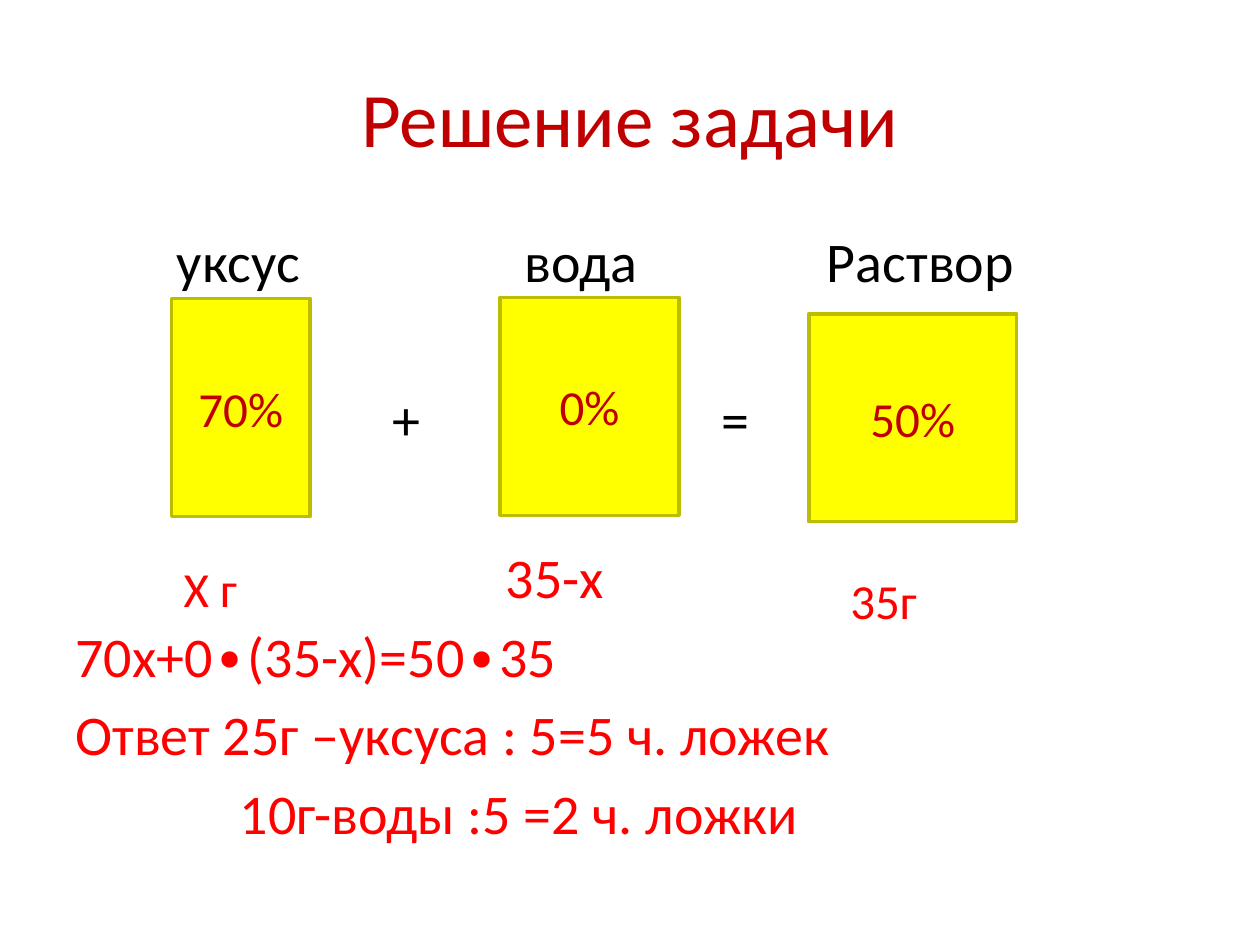
from lxml.etree import SubElement
from pptx import Presentation
from pptx.dml.color import RGBColor
from pptx.enum.shapes import MSO_SHAPE
from pptx.enum.text import MSO_ANCHOR, PP_ALIGN
from pptx.oxml.ns import qn
from pptx.util import Pt

BLACK, RED, DARK = "000000", "FF0000", "C00000"
SIZE, GAP = 32, 6.4
SKIP = 51.9  # one empty line plus the usual gap

# space before, colour, tab stops, text
LINES = [
    (0, BLACK, [58, 256.5, 429.5], "\tуксус\tвода\tРаствор"),
    (SKIP, BLACK, [181, 369.5], "\t+\t="),
    (SKIP, RED, [246], "\t35-х"),
    (GAP, RED, [], "70х+0∙(35-х)=50∙35"),
    (GAP, RED, [], "Ответ 25г –уксуса : 5=5 ч. ложек"),
    (GAP, RED, [94], "\t10г-воды :5 =2 ч. ложки"),
]
# left, top, width, height, text
TANKS = [
    (98, 170.6, 79.2, 124.6, "70%"),
    (285.8, 169.9, 102.2, 124.6, "0%"),
    (462.2, 179.3, 118.8, 118.8, "50%"),
]
MASSES = [
    (478.8, 322.6, 73.4, 41, "35г"),
    (97.9, 315.4, 69.8, 41, "Х г"),
]


def color(code):
    return RGBColor.from_string(code)


def style(item, form):
    for name, value in form.items():
        setattr(item, name, value)


def write(para, text, size, code):
    run = para.add_run()
    run.text = text
    style(run.font, {"name": "Calibri", "size": Pt(size)})
    run.font.color.rgb = color(code)


def add_stops(para, stops):
    if stops:
        tabs = SubElement(para._p.get_or_add_pPr(), qn("a:tabLst"))
        for stop in stops:
            SubElement(tabs, qn("a:tab"), pos=str(Pt(stop)), algn="l")


def add_box(slide, place):
    """Add an empty wrapping text box and return its frame."""
    frame = slide.shapes.add_textbox(*map(Pt, place)).text_frame
    frame.word_wrap = True
    return frame


def add_title(slide, text):
    frame = add_box(slide, (36, 21.6, 648, 90))
    frame.vertical_anchor = MSO_ANCHOR.MIDDLE
    para = frame.paragraphs[0]
    para.alignment = PP_ALIGN.CENTER
    write(para, text, 44, DARK)


def add_body(slide):
    frame = add_box(slide, (36, 126, 648, 356.4))
    for row, (gap, code, stops, text) in enumerate(LINES):
        para = frame.add_paragraph() if row else frame.paragraphs[0]
        add_stops(para, stops)
        if gap:
            para.space_before = Pt(gap)
        write(para, text, SIZE, code)


def add_tank(slide, *place, text):
    tank = slide.shapes.add_shape(MSO_SHAPE.RECTANGLE, *map(Pt, place))
    tank.shadow.inherit = False
    tank.fill.solid()
    tank.fill.fore_color.rgb = color("FFFF00")
    tank.line.color.rgb = color("BDBD00")
    tank.line.width = Pt(2)
    tank.text_frame.vertical_anchor = MSO_ANCHOR.MIDDLE
    para = tank.text_frame.paragraphs[0]
    para.alignment = PP_ALIGN.CENTER
    write(para, text, 28, DARK)


def main():
    deck = Presentation()
    style(deck, {"slide_width": Pt(720), "slide_height": Pt(540)})
    slide = deck.slides.add_slide(deck.slide_layouts[6])
    add_title(slide, "Решение задачи")
    add_body(slide)
    for *place, text in TANKS:
        add_tank(slide, *place, text=text)
    for *place, text in MASSES:
        write(add_box(slide, place).paragraphs[0], text, 28, RED)
    deck.save("out.pptx")


if __name__ == "__main__":
    main()
